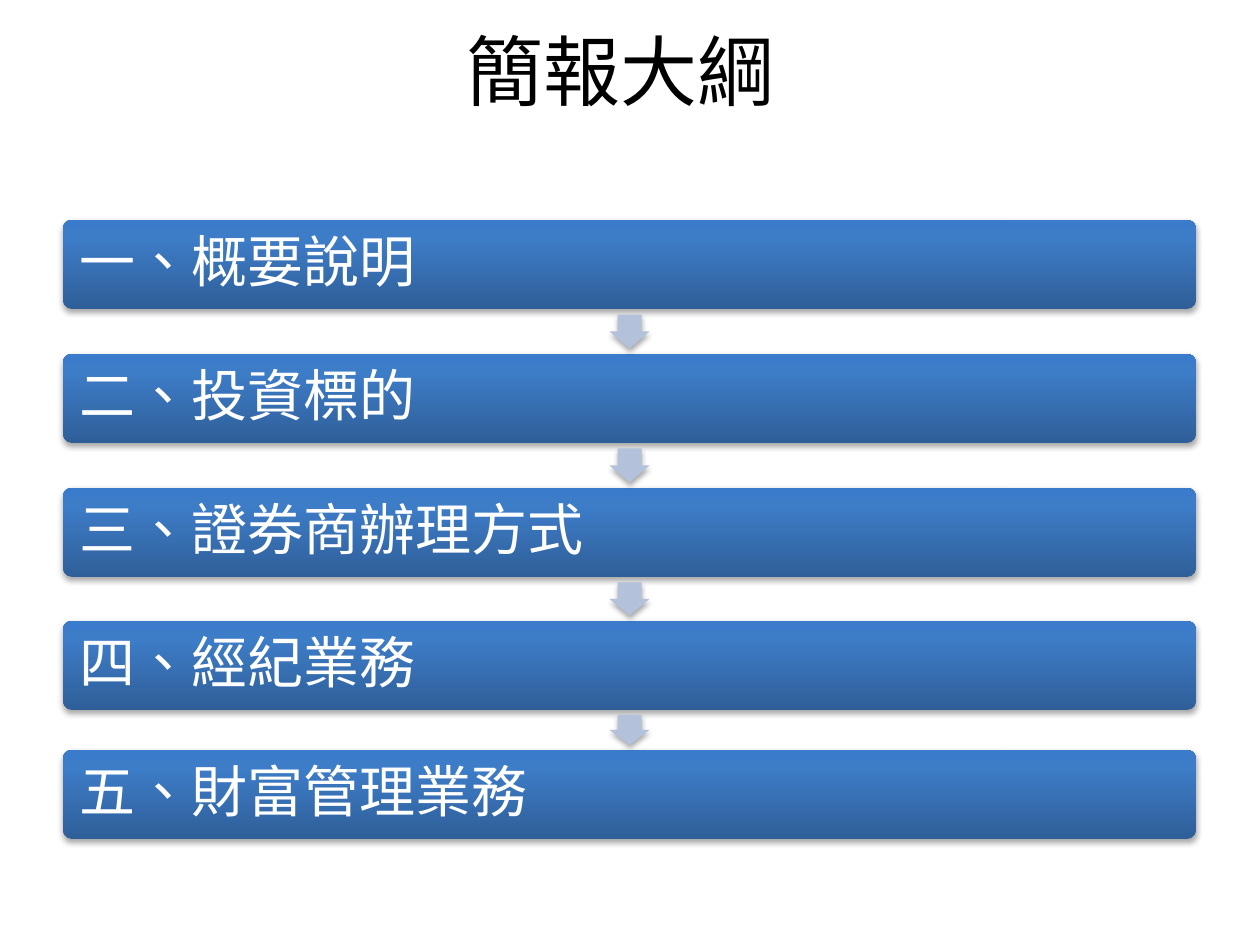
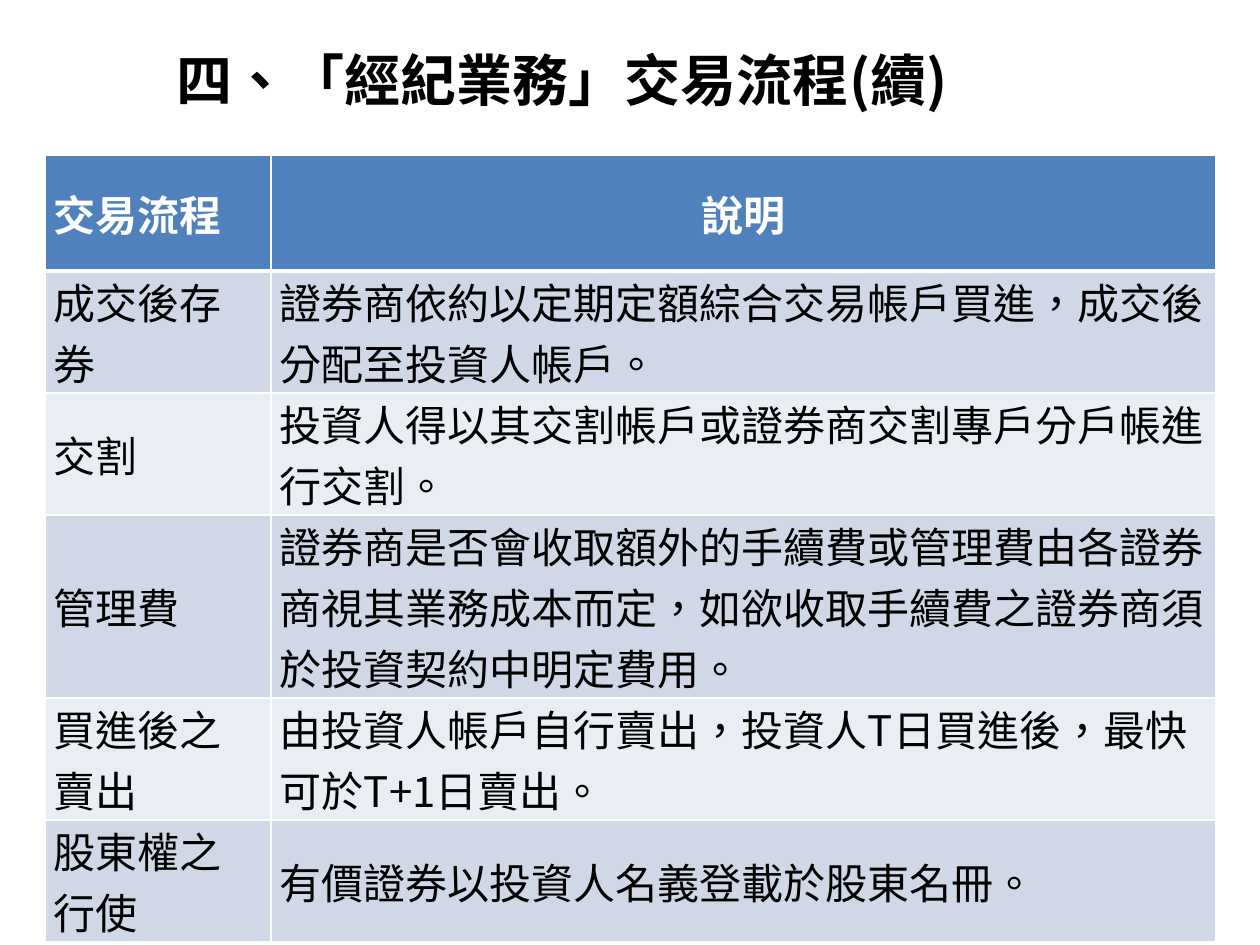
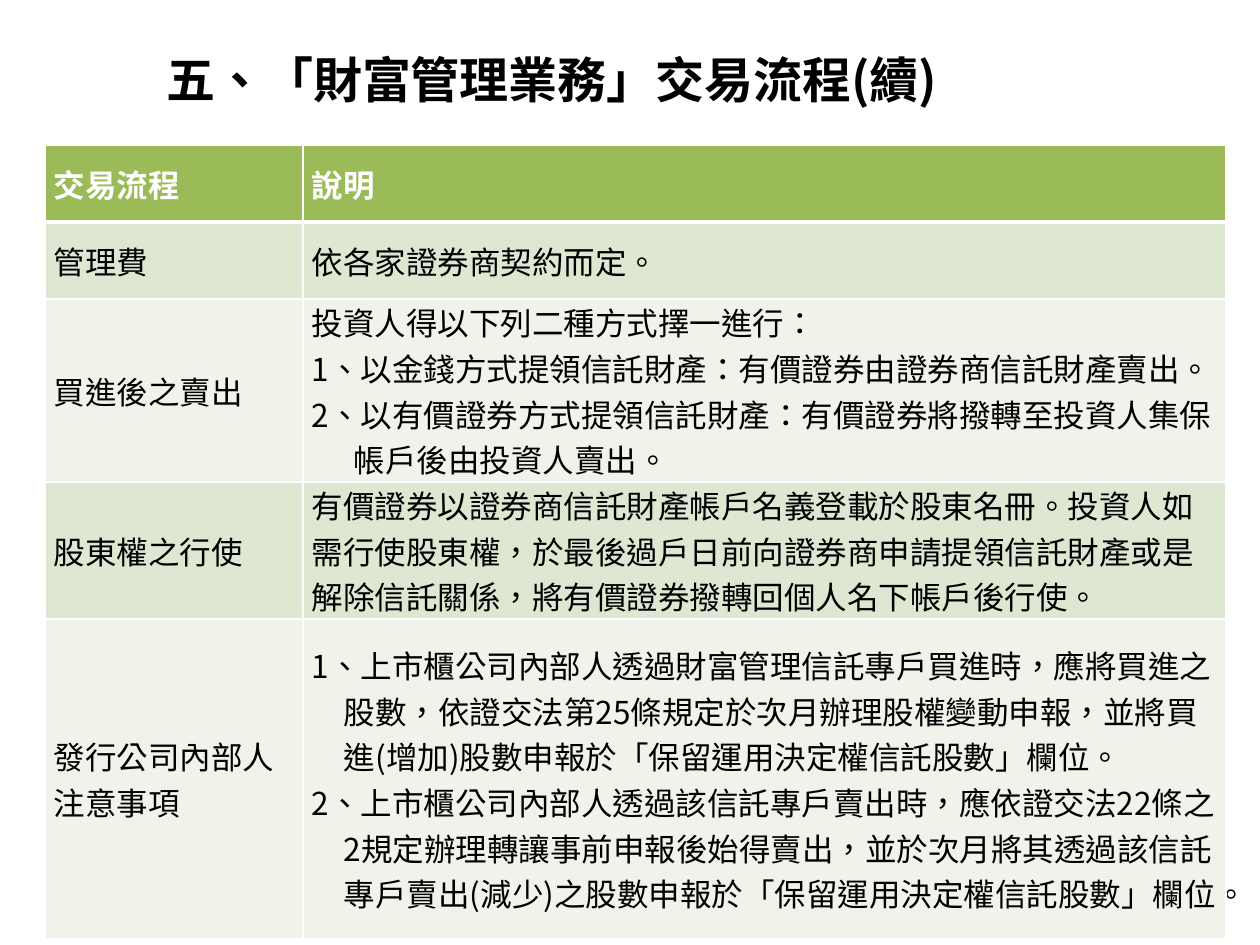
from dataclasses import dataclass
from itertools import pairwise

from pptx import Presentation
from pptx import util as u
from pptx.dml.color import RGBColor
from pptx.enum import shapes, text
from pptx.oxml import parse_xml
from pptx.oxml.ns import nsdecls, qn


@dataclass(frozen=True)
class Theme:
    font: str = "Noto Sans CJK SC"
    language: str = "zh-TW"
    ink: str = "000000"
    paper: str = "FFFFFF"
    bar_stops: tuple = ((0, "2F5F99"), (80, "3D7CC7"), (100, "3A7CCB"))
    arrow: str = "B3C1DB"
    # header, odd rows, even rows
    blue: tuple = ("4F81BD", "D0D8E8", "E9EDF4")
    green: tuple = ("9BBB59", "DEE7D1", "EFF3EA")
    outline_title: int = 44
    outline_item: int = 32


THEME = Theme()
PX = 914400 / 126
LEFT, CENTER = text.PP_ALIGN.LEFT, text.PP_ALIGN.CENTER

# Content
OUTLINE_TITLE = "簡報大綱"
OUTLINE = ["一、概要說明", "二、投資標的", "三、證券商辦理方式", "四、經紀業務", "五、財富管理業務"]

# A description is a list of (hanging indent in px, paragraph)
BROKERAGE = dict(
    title="四、「經紀業務」交易流程(續)", title_left=164, title_size=32,
    colours=THEME.blue, size=24, header_align=CENTER,
    origin=(45, 155), columns=(226, 945), heights=(116, 122, 122, 183, 122, 122),
    rows=[
        ("交易流程", [(0, "說明")]),
        ("成交後存券", [(0, "證券商依約以定期定額綜合交易帳戶買進，成交後分配至投資人帳戶。")]),
        ("交割", [(0, "投資人得以其交割帳戶或證券商交割專戶分戶帳進行交割。")]),
        ("管理費", [(0, "證券商是否會收取額外的手續費或管理費由各證券商視其業務成本而定，"
                     "如欲收取手續費之證券商須於投資契約中明定費用。")]),
        ("買進後之賣出", [(0, "由投資人帳戶自行賣出，投資人T日買進後，最快可於T+1日賣出。")]),
        ("股東權之行使", [(0, "有價證券以投資人名義登載於股東名冊。")]),
    ])

WEALTH = dict(
    title="五、「財富管理業務」交易流程(續)", title_left=154, title_size=28,
    colours=THEME.green, size=18, header_align=LEFT,
    origin=(45, 145), columns=(258, 923), heights=(77, 77, 183, 137, 320),
    rows=[
        ("交易流程", [(0, "說明")]),
        ("管理費", [(0, "依各家證券商契約而定。")]),
        ("買進後之賣出", [
            (0, "投資人得以下列二種方式擇一進行："),
            (42, "1、以金錢方式提領信託財產：有價證券由證券商信託財產賣出。"),
            (42, "2、以有價證券方式提領信託財產：有價證券將撥轉至投資人集保帳戶後由投資人賣出。")]),
        ("股東權之行使", [
            (0, "有價證券以證券商信託財產帳戶名義登載於股東名冊。投資人如需行使股東權，"
                "於最後過戶日前向證券商申請提領信託財產或是解除信託關係，"
                "將有價證券撥轉回個人名下帳戶後行使。")]),
        ("發行公司內部人注意事項", [
            (32, "1、上市櫃公司內部人透過財富管理信託專戶買進時，應將買進之股數，"
                 "依證交法第25條規定於次月辦理股權變動申報，"
                 "並將買進(增加)股數申報於「保留運用決定權信託股數」欄位。"),
            (32, "2、上市櫃公司內部人透過該信託專戶賣出時，應依證交法22條之2規定辦理轉讓事前申報後始得賣出，"
                 "並於次月將其透過該信託專戶賣出(減少)之股數申報於「保留運用決定權信託股數」欄位。")]),
    ])

# Outline layout, in px
BAR_LEFT, BAR_WIDTH, BAR_HEIGHT = 63, 1133, 89
BAR_TOPS = (220, 354, 488, 621, 750)
ARROW_WIDTH = 40


def px(*lengths):
    return [u.Emu(round(length * PX)) for length in lengths]


def write(paragraph, words, size, colour, bold=False, align=LEFT):
    paragraph.alignment = align
    run = paragraph.add_run()
    run.text = words
    font = run.font
    font.size, font.bold, font.name = u.Pt(size), bold, THEME.font
    font.color.rgb = RGBColor.from_string(colour)
    properties = font._element
    properties.set("lang", THEME.language)
    properties.append(parse_xml(f'<a:ea {nsdecls("a")} typeface="{THEME.font}"/>'))


def add_title(slide, words, box, size, bold=True, align=LEFT):
    frame = slide.shapes.add_textbox(*px(*box)).text_frame
    frame.word_wrap = True
    frame.vertical_anchor = text.MSO_ANCHOR.MIDDLE
    write(frame.paragraphs[0], words, size, THEME.ink, bold, align)


# Outline slide
def add_raised(slide, preset, box):
    shape = slide.shapes.add_shape(preset, *px(*box))
    shape.line.fill.background()
    shape.shadow.inherit = False
    shape._element.spPr.find(qn("a:effectLst")).append(parse_xml(
        f'<a:outerShdw {nsdecls("a")} blurRad="40000" dist="23000" dir="5400000" rotWithShape="0">'
        '<a:srgbClr val="000000"><a:alpha val="35000"/></a:srgbClr></a:outerShdw>'))
    return shape


def add_bar(slide, item, top):
    bar = add_raised(slide, shapes.MSO_SHAPE.ROUNDED_RECTANGLE,
                     (BAR_LEFT, top, BAR_WIDTH, BAR_HEIGHT))
    bar.adjustments[0] = 0.1
    stops = "".join(f'<a:gs pos="{place * 1000}"><a:srgbClr val="{colour}"/></a:gs>'
                    for place, colour in THEME.bar_stops)
    bar._element.spPr.find(qn("a:prstGeom")).addnext(parse_xml(
        f'<a:gradFill {nsdecls("a")} rotWithShape="1"><a:gsLst>{stops}</a:gsLst>'
        '<a:lin ang="16200000" scaled="0"/></a:gradFill>'))
    frame = bar.text_frame
    frame.word_wrap = True
    frame.vertical_anchor = text.MSO_ANCHOR.MIDDLE
    frame.margin_left, frame.margin_right = px(14, 14)
    frame.paragraphs[0].line_spacing = 0.9
    write(frame.paragraphs[0], item, THEME.outline_item, THEME.paper)


def add_step_arrow(slide, top, next_top):
    gap = next_top - top - BAR_HEIGHT
    length = round(gap * 3 / 4)
    middle_x, middle_y = BAR_LEFT + BAR_WIDTH / 2, next_top - gap / 2
    arrow = add_raised(slide, shapes.MSO_SHAPE.RIGHT_ARROW,
                       (middle_x - length / 2, middle_y - ARROW_WIDTH / 2, length, ARROW_WIDTH))
    arrow.rotation = 90
    arrow.adjustments[0], arrow.adjustments[1] = 0.6, 0.5
    arrow.fill.solid()
    arrow.fill.fore_color.rgb = RGBColor.from_string(THEME.arrow)


def build_outline(slide):
    add_title(slide, OUTLINE_TITLE, (54, 0, 1134, 140), THEME.outline_title, False, CENTER)
    for item, top in zip(OUTLINE, BAR_TOPS):
        add_bar(slide, item, top)
    for top, next_top in pairwise(BAR_TOPS):
        add_step_arrow(slide, top, next_top)


# Process table slides
def set_borders(cell, row):
    points = {"L": 1, "R": 1, "T": 3 if row == 1 else 1, "B": 3 if row == 0 else 1}
    for place, (side, width) in enumerate(points.items()):
        cell._tc.get_or_add_tcPr().insert(place, parse_xml(
            f'<a:ln{side} {nsdecls("a")} w="{u.Pt(width)}"><a:solidFill>'
            f'<a:srgbClr val="{THEME.paper}"/></a:solidFill></a:ln{side}>'))


def fill_cell(cell, row, paragraphs, size, colours, align):
    header = row == 0
    cell.fill.solid()
    cell.fill.fore_color.rgb = RGBColor.from_string(colours[0 if header else 2 - row % 2])
    set_borders(cell, row)
    cell.vertical_anchor = text.MSO_ANCHOR.MIDDLE
    cell.margin_left, cell.margin_right, cell.margin_top, cell.margin_bottom = px(9, 9, 0, 0)
    frame = cell.text_frame
    for index, (hang, words) in enumerate(paragraphs):
        paragraph = frame.add_paragraph() if index else frame.paragraphs[0]
        if hang:
            indent = px(hang)[0]
            properties = paragraph._p.get_or_add_pPr()
            properties.set("marL", str(indent))
            properties.set("indent", str(-indent))
        write(paragraph, words, size, THEME.paper if header else THEME.ink, header, align)


def build_process(slide, process):
    rows, columns, heights = process["rows"], process["columns"], process["heights"]
    table = slide.shapes.add_table(
        len(rows), len(columns), *px(*process["origin"], sum(columns), sum(heights))).table
    table.horz_banding = False
    for column, width in zip(table.columns, px(*columns)):
        column.width = width
    for line, height in zip(table.rows, px(*heights)):
        line.height = height
    for row, (step, description) in enumerate(rows):
        align = LEFT if row else process["header_align"]
        fill_cell(table.cell(row, 0), row, [(0, step)], process["size"], process["colours"], LEFT)
        fill_cell(table.cell(row, 1), row, description, process["size"], process["colours"], align)
    add_title(slide, process["title"], (process["title_left"], 0, 1134, 158), process["title_size"])


def main():
    deck = Presentation()
    deck.slide_width, deck.slide_height = px(1260, 945)
    blank = deck.slide_layouts[6]
    build_outline(deck.slides.add_slide(blank))
    for process in (BROKERAGE, WEALTH):
        build_process(deck.slides.add_slide(blank), process)
    deck.save("out.pptx")


if __name__ == "__main__":
    main()
